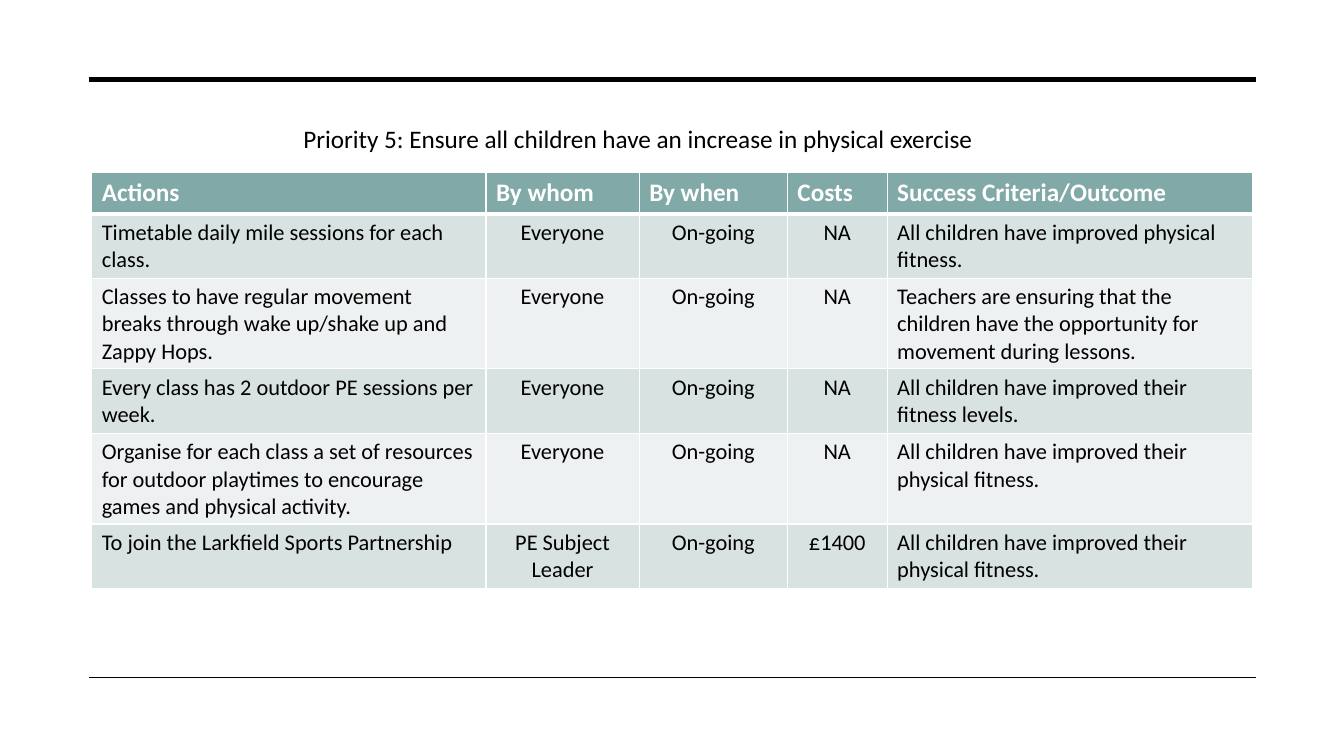
from lxml.etree import SubElement
from pptx import Presentation
from pptx.dml.color import RGBColor
from pptx.enum.shapes import MSO_CONNECTOR
from pptx.enum.text import MSO_AUTO_SIZE, PP_ALIGN
from pptx.oxml import parse_xml
from pptx.oxml.ns import nsdecls, qn
from pptx.util import Inches, Pt

BLACK = RGBColor(0x00, 0x00, 0x00)
WHITE = RGBColor(0xFF, 0xFF, 0xFF)
TEAL = RGBColor(0x80, 0xA9, 0xA7)
PALE_TEAL = RGBColor(0xD8, 0xE2, 0xE1)
PALEST_TEAL = RGBColor(0xED, 0xF1, 0xF1)


def write(frame, text, size=16, color=BLACK, bold=False, align=PP_ALIGN.LEFT):
    paragraph = frame.paragraphs[0]
    paragraph.alignment = align
    run = paragraph.add_run()
    run.text = text
    run.font.name = "Calibri"
    run.font.size = Pt(size)
    run.font.bold = bold
    run.font.color.rgb = color


def add_borders(cell, widths):
    properties = cell._tc.get_or_add_tcPr()
    for position, (side, width) in enumerate(widths.items()):
        properties.insert(position, parse_xml(
            f'<a:ln{side} {nsdecls("a")} w="{Pt(width)}"><a:solidFill>'
            f'<a:srgbClr val="{WHITE}"/></a:solidFill></a:ln{side}>'))


presentation = Presentation()
presentation.slide_width = Inches(13.33)
presentation.slide_height = Inches(7.5)
slide = presentation.slides.add_slide(presentation.slide_layouts[6])

for rule_y, rule_width in [(0.79, 3.5), (6.72, 1)]:
    rule = slide.shapes.add_connector(
        MSO_CONNECTOR.STRAIGHT, Inches(0.88), Inches(rule_y), Inches(12.46), Inches(rule_y))
    rule.line.color.rgb = BLACK
    rule.line.width = Pt(rule_width)
    SubElement(rule._element.spPr, qn("a:effectLst"))

priority = slide.shapes.add_textbox(Inches(2.91), Inches(1.17), Inches(6.92), Inches(0.4)).text_frame
priority.word_wrap = False
priority.auto_size = MSO_AUTO_SIZE.SHAPE_TO_FIT_TEXT
write(priority, "Priority 5: Ensure all children have an increase in physical exercise", size=18)

plan = [
    ("Actions", "By whom", "By when", "Costs", "Success Criteria/Outcome"),
    ("Timetable daily mile sessions for each class.", "Everyone", "On-going", "NA",
     "All children have improved physical fitness."),
    ("Classes to have regular movement breaks through wake up/shake up and Zappy Hops.",
     "Everyone", "On-going", "NA",
     "Teachers are ensuring that the children have the opportunity for movement during lessons."),
    ("Every class has 2 outdoor PE sessions per week.", "Everyone", "On-going", "NA",
     "All children have improved their fitness levels."),
    ("Organise for each class a set of resources for outdoor playtimes to encourage games "
     "and physical activity.", "Everyone", "On-going", "NA",
     "All children have improved their physical fitness."),
    ("To join the Larkfield Sports Partnership", "PE Subject Leader", "On-going", "£1400",
     "All children have improved their physical fitness."),
]
column_widths = [3.91, 1.52, 1.47, 0.99, 3.62]
row_heights = [0.41, 0.64, 0.9, 0.64, 0.9, 0.64]

actions = slide.shapes.add_table(
    len(plan), len(column_widths), Inches(0.91), Inches(1.71),
    Inches(sum(column_widths)), Inches(sum(row_heights))).table
for column, width in zip(actions.columns, column_widths):
    column.width = Inches(width)
for row, height in zip(actions.rows, row_heights):
    row.height = Inches(height)

for row_index, entries in enumerate(plan):
    is_header = row_index == 0
    band = TEAL if is_header else PALE_TEAL if row_index % 2 else PALEST_TEAL
    for column_index, entry in enumerate(entries):
        cell = actions.cell(row_index, column_index)
        cell.fill.solid()
        cell.fill.fore_color.rgb = band
        add_borders(cell, {"L": 1, "R": 1, "T": 3 if row_index == 1 else 1, "B": 3 if is_header else 1})
        if is_header:
            write(cell.text_frame, entry, size=18, color=WHITE, bold=True)
        else:
            centred = column_index in (1, 2, 3)
            write(cell.text_frame, entry, align=PP_ALIGN.CENTER if centred else PP_ALIGN.LEFT)

presentation.save("out.pptx")
